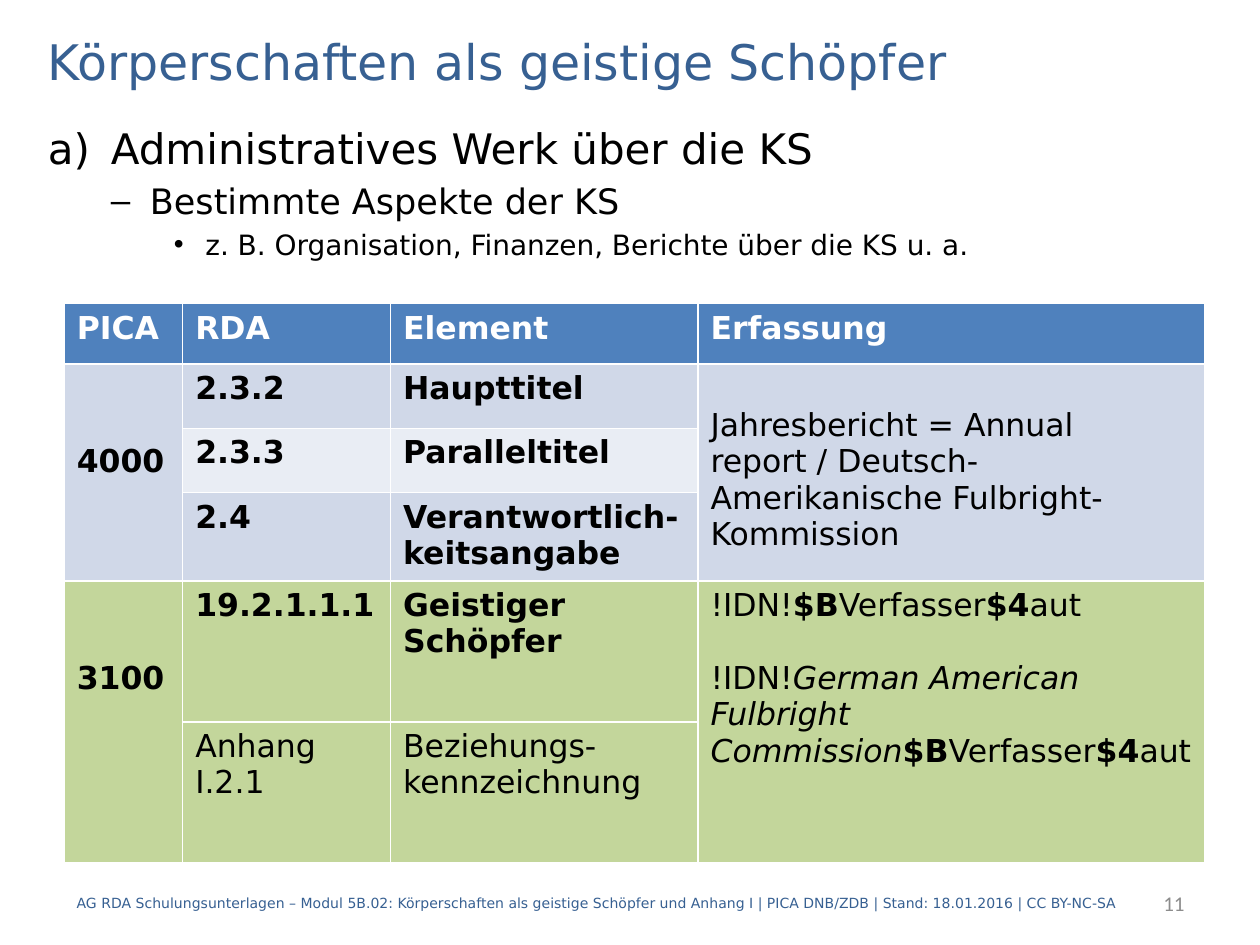
from dataclasses import dataclass

from pptx import Presentation
from pptx import util as u
from pptx.dml.color import RGBColor
from pptx.enum import text
from pptx.oxml.ns import qn
from lxml import etree


@dataclass(frozen=True)
class Theme:
    font: str = "DejaVu Sans"
    number_font: str = "Calibri"
    blue: str = "376092"
    black: str = "000000"
    white: str = "FFFFFF"
    grey: str = "8C8C8C"
    header: str = "4F81BD"
    band: str = "D0D8E8"
    band_light: str = "E9EDF4"
    green: str = "C3D69B"
    title_size: int = 28
    list_sizes: tuple = (24, 20, 16)
    table_size: int = 18
    footer_size: int = 8
    number_size: int = 12


T = Theme()
LINE = 0.29  # height of one table text line in inches

# Text, left margin and hanging indent for each list level
OUTLINE = [
    ("Administratives Werk über die KS", 0.5, 0.5),
    ("Bestimmte Aspekte der KS", 0.81, 0.31),
    ("z. B. Organisation, Finanzen, Berichte über die KS u. a.", 1.25, 0.25),
]

# A cell is a list of paragraphs; a paragraph is a list of (text, style) runs
AUTHOR = [("$B", "b"), ("Verfasser", ""), ("$4", "b"), ("aut", "")]
WORK = "Jahresbericht = Annual report / Deutsch-Amerikanische Fulbright-Kommission"
BODY = "German American Fulbright Commission"


def plain(*lines):
    return [[(line, "")] for line in lines]


def bold(line):
    return [[(line, "b")]]


ROWS = [
    [bold(name) for name in ("PICA", "RDA", "Element", "Erfassung")],
    [bold("4000"), bold("2.3.2"), bold("Haupttitel"), plain(WORK)],
    [None, bold("2.3.3"), bold("Paralleltitel"), None],
    [None, bold("2.4"), bold("Verantwortlich-keitsangabe"), None],
    [bold("3100"), bold("19.2.1.1.1"), bold("Geistiger Schöpfer"),
     [[("!IDN!", "")] + AUTHOR, [("!IDN!", ""), (BODY, "i")] + AUTHOR]],
    [None, plain("Anhang I.2.1"), plain("Beziehungs-", "kennzeichnung"), None],
]
COL_WIDTHS = (0.94, 1.65, 2.44, 4.02)
ROW_HEIGHTS = (0.48, 0.51, 0.51, 0.68, 1.12, 1.12)
ROW_FILLS = (T.header, T.band, T.band_light, T.band, T.green, T.green)
MERGES = [((1, 0), (3, 0)), ((1, 3), (3, 3)), ((4, 0), (5, 0)), ((4, 3), (5, 3))]
LINES_ABOVE = {(1, 0): 2, (1, 3): 1, (4, 0): 2}


def place(sp, left, top, width, height):
    box = dict(left=left, top=top, width=width, height=height)
    for name, value in box.items():
        setattr(sp, name, u.Inches(value))


def add_run(p, words, size, color, font=T.font, **extra):
    r = p.add_run()
    r.text = words
    for name, value in dict(name=font, size=u.Pt(size), **extra).items():
        setattr(r.font, name, value)
    r.font.color.rgb = RGBColor.from_string(color)


def add_title(s, words):
    sp = s.shapes.title
    place(sp, 0.28, 0.2, 9.45, 0.56)
    p = sp.text_frame.paragraphs[0]
    p.alignment = text.PP_ALIGN.LEFT
    add_run(p, words, T.title_size, T.blue)


def add_outline(s):
    sp = s.placeholders[1]
    place(sp, 0.28, 0.92, 9.45, 1.4)
    tf = sp.text_frame
    for level, (words, margin, hang) in enumerate(OUTLINE):
        p = tf.paragraphs[0] if level == 0 else tf.add_paragraph()
        p.level = level
        add_run(p, words, T.list_sizes[level], T.black)
        pPr = p._p.get_or_add_pPr()
        pPr.set("marL", str(u.Inches(margin)))
        pPr.set("indent", str(-u.Inches(hang)))
        if level == 0:
            etree.SubElement(pPr, qn("a:buAutoNum"), type="alphaLcParenR")


def fill_cell(cell, paragraphs, color):
    tf = cell.text_frame
    for i, runs in enumerate(paragraphs):
        p = tf.paragraphs[0] if i == 0 else tf.add_paragraph()
        # An entry after another catalogue entry stands one line lower
        if i and len(runs) > 1:
            p.space_before = u.Inches(LINE)
        for words, style in runs:
            add_run(p, words, T.table_size, color,
                    bold=style == "b", italic=style == "i")


def add_catalogue_table(s):
    frame = s.shapes.add_table(len(ROWS), len(COL_WIDTHS), u.Inches(0.51),
                               u.Inches(2.41), u.Inches(9.06), u.Inches(4.43))
    table = frame.table
    for col, width in zip(table.columns, COL_WIDTHS):
        col.width = u.Inches(width)
    for row, height in zip(table.rows, ROW_HEIGHTS):
        row.height = u.Inches(height)
    for (r1, c1), (r2, c2) in MERGES:
        table.cell(r1, c1).merge(table.cell(r2, c2))
    for i, contents in enumerate(ROWS):
        for j, paragraphs in enumerate(contents):
            cell = table.cell(i, j)
            cell.fill.solid()
            cell.fill.fore_color.rgb = RGBColor.from_string(ROW_FILLS[i])
            if paragraphs:
                fill_cell(cell, paragraphs, T.black if i else T.white)
    for (i, j), lines in LINES_ABOVE.items():
        table.cell(i, j).margin_top = u.Inches(0.05 + lines * LINE)


def add_footer_text(s, words, left, width, size, color, font, align):
    sp = s.shapes.add_textbox(u.Inches(left), u.Inches(6.97),
                              u.Inches(width), u.Inches(0.4))
    tf = sp.text_frame
    tf.word_wrap = True
    tf.vertical_anchor = text.MSO_ANCHOR.MIDDLE
    p = tf.paragraphs[0]
    p.alignment = align
    add_run(p, words, size, color, font)


def main():
    prs = Presentation()
    prs.slide_width, prs.slide_height = u.Inches(10), u.Inches(7.5)
    s = prs.slides.add_slide(prs.slide_layouts[1])

    # Heading and outline
    add_title(s, "Körperschaften als geistige Schöpfer")
    add_outline(s)

    # Footer and page number
    add_footer_text(
        s, "AG RDA Schulungsunterlagen – Modul 5B.02: Körperschaften als geistige "
        "Schöpfer und Anhang I | PICA DNB/ZDB | Stand: 18.01.2016 | CC BY-NC-SA",
        0.51, 8.74, T.footer_size, T.blue, T.font, text.PP_ALIGN.LEFT)
    add_footer_text(s, "11", 7.91, 1.59, T.number_size, T.grey,
                    T.number_font, text.PP_ALIGN.RIGHT)

    # Cataloguing example
    add_catalogue_table(s)
    prs.save("out.pptx")


if __name__ == "__main__":
    main()
